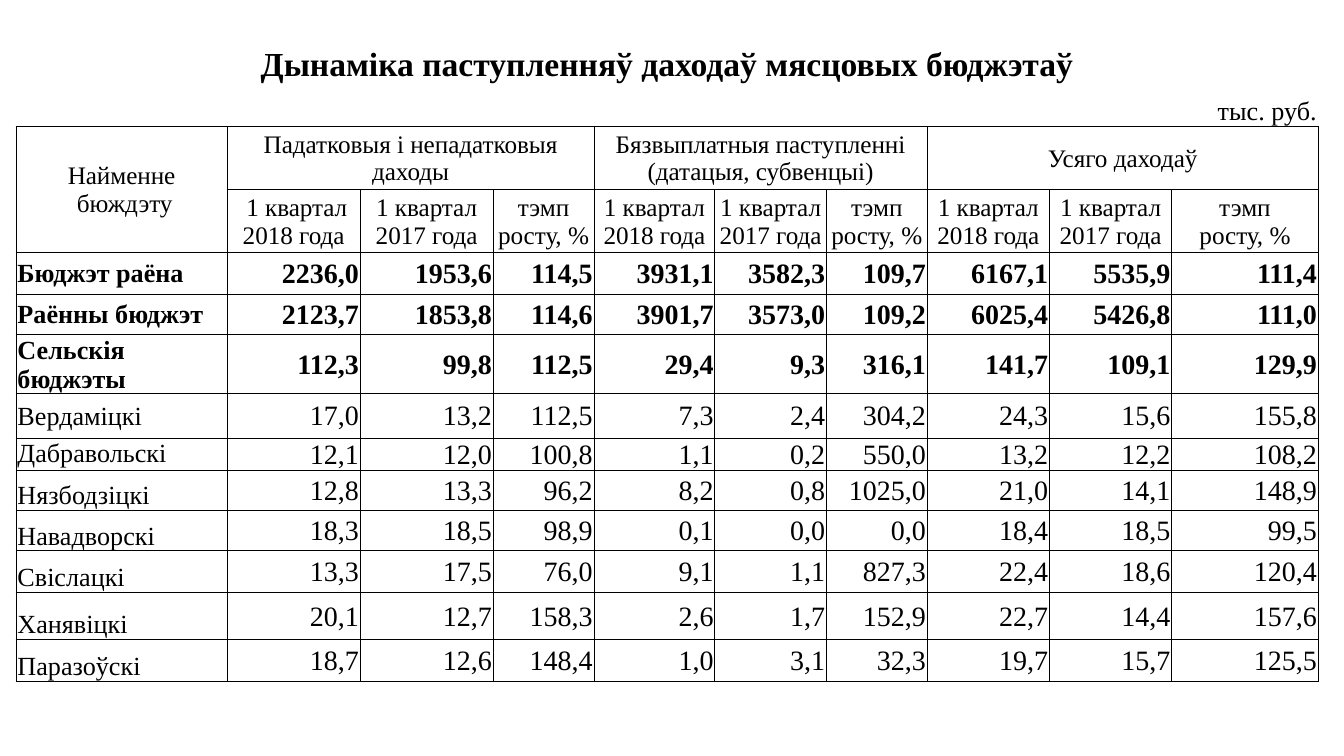
import lxml.etree
import pptx
import pptx.dml.color
import pptx.enum.text
import pptx.oxml.ns
import pptx.util

Inches = pptx.util.Inches
ALIGN = pptx.enum.text.PP_ALIGN
ANCHOR = pptx.enum.text.MSO_ANCHOR

FONT = "Times New Roman"
INK = "000000"
COLUMN_WIDTHS = [1.57, 0.99, 0.84, 0.15, 0.75, 0.9, 0.21, 0.62, 0.75, 0.91, 0.29, 0.62, 0.23, 0.86]
ROW_HEIGHTS = [0.33, 0.32, 0.47, 0.47, 0.31, 0.3, 0.3, 0.33, 0.24, 0.3, 0.3, 0.31, 0.35, 0.31]
UNIT_ROW, GROUP_ROW, PERIOD_ROW, FIRST_BUDGET_ROW = 1, 2, 3, 4

UNIT_SPANS = [(1, 2), (3, 4), (7, 2), (9, 2), (11, 2)]
VALUE_SPANS = [(1, 1), (2, 2), (4, 1), (5, 1), (6, 2), (8, 1), (9, 1), (10, 2), (12, 2)]
GROUPS = [
    (1, 4, "Падатковыя і непадатковыя даходы"),
    (5, 4, "Бязвыплатныя паступленні (датацыя, субвенцыі)"),
    (9, 5, "Усяго даходаў"),
]
PERIODS = ["1 квартал 2018 года", "1 квартал 2017 года", "тэмп\nросту, %"]
BUDGETS = [
    ("Бюджэт раёна", "2236,0 1953,6 114,5 3931,1 3582,3 109,7 6167,1 5535,9 111,4"),
    ("Раённы бюджэт", "2123,7 1853,8 114,6 3901,7 3573,0 109,2 6025,4 5426,8 111,0"),
    ("Сельскія бюджэты", "112,3 99,8 112,5 29,4 9,3 316,1 141,7 109,1 129,9"),
    ("Вердаміцкі", "17,0 13,2 112,5 7,3 2,4 304,2 24,3 15,6 155,8"),
    ("Дабравольскі", "12,1 12,0 100,8 1,1 0,2 550,0 13,2 12,2 108,2"),
    ("Нязбодзіцкі", "12,8 13,3 96,2 8,2 0,8 1025,0 21,0 14,1 148,9"),
    ("Навадворскі", "18,3 18,5 98,9 0,1 0,0 0,0 18,4 18,5 99,5"),
    ("Свіслацкі", "13,3 17,5 76,0 9,1 1,1 827,3 22,4 18,6 120,4"),
    ("Ханявіцкі", "20,1 12,7 158,3 2,6 1,7 152,9 22,7 14,4 157,6"),
    ("Паразоўскі", "18,7 12,6 148,4 1,0 3,1 32,3 19,7 15,7 125,5"),
]
TOTAL_COUNT = 3
TOP_ANCHORED = 4
FIRST_BOTTOM_ANCHORED = 5


def color(value):
    return pptx.dml.color.RGBColor.from_string(value)


def set_borders(cell, sides):
    properties = cell._tc.get_or_add_tcPr()
    qn = pptx.oxml.ns.qn
    for side in "LRTB":
        line = lxml.etree.SubElement(properties, qn(f"a:ln{side}"), w=str(pptx.util.Pt(0.5)))
        if side in sides:
            fill = lxml.etree.SubElement(line, qn("a:solidFill"))
            lxml.etree.SubElement(fill, qn("a:srgbClr"), val=INK)
        else:
            lxml.etree.SubElement(line, qn("a:noFill"))


def style_cell(cell, row):
    cell.margin_left = cell.margin_right = cell.margin_top = Inches(0.01)
    cell.margin_bottom = 0
    set_borders(cell, "LRTB" if row >= GROUP_ROW else "B" if row == UNIT_ROW else "")
    cell.fill.background()


def merge(table, row, column, width, height=1):
    cell = table.cell(row, column)
    if width > 1 or height > 1:
        cell.merge(table.cell(row + height - 1, column + width - 1))
    return cell


def write(cell, text, size, align=ALIGN.CENTER, anchor=ANCHOR.MIDDLE, bold=False):
    cell.vertical_anchor = anchor
    for index, line in enumerate(text.split("\n")):
        frame = cell.text_frame
        para = frame.add_paragraph() if index else frame.paragraphs[0]
        para.alignment = align
        span = para.add_run()
        span.text = line
        span.font.name = FONT
        span.font.size = pptx.util.Pt(size)
        span.font.bold = bold
        span.font.color.rgb = color(INK)


def add_grid(page):
    frame = page.shapes.add_table(
        len(ROW_HEIGHTS), len(COLUMN_WIDTHS), Inches(0.12), Inches(0.29),
        Inches(sum(COLUMN_WIDTHS)), Inches(sum(ROW_HEIGHTS)))
    table = frame.table
    table.first_row = table.horz_banding = False
    for column, width in zip(table.columns, COLUMN_WIDTHS):
        column.width = Inches(width)
    for index, (row, height) in enumerate(zip(table.rows, ROW_HEIGHTS)):
        row.height = Inches(height)
        for cell in row.cells:
            style_cell(cell, index)
    return table


def fill_title(table):
    title = merge(table, 0, 0, len(COLUMN_WIDTHS))
    write(title, "Дынаміка паступленняў даходаў мясцовых бюджэтаў", 18,
          anchor=ANCHOR.BOTTOM, bold=True)
    for column, width in UNIT_SPANS:
        merge(table, UNIT_ROW, column, width)
    unit = table.cell(UNIT_ROW, len(COLUMN_WIDTHS) - 1)
    write(unit, "тыс. руб.", 14, ALIGN.RIGHT, ANCHOR.BOTTOM)


def fill_header(table):
    write(merge(table, GROUP_ROW, 0, 1, 2), "Найменне\n бюждэту", 13.5)
    for column, width, text in GROUPS:
        write(merge(table, GROUP_ROW, column, width), text, 13.5)
    for index, (column, width) in enumerate(VALUE_SPANS):
        text = PERIODS[index % len(PERIODS)]
        if index == 0:
            text = " " + text
        write(merge(table, PERIOD_ROW, column, width), text, 13.5)


def fill_budgets(table):
    for index, (name, values) in enumerate(BUDGETS):
        row = FIRST_BUDGET_ROW + index
        bold = index < TOTAL_COUNT
        anchor = ANCHOR.TOP if index == TOP_ANCHORED else ANCHOR.MIDDLE
        name_anchor = ANCHOR.BOTTOM if index >= FIRST_BOTTOM_ANCHORED else anchor
        write(table.cell(row, 0), name, 14, ALIGN.LEFT, name_anchor, bold)
        for (column, width), value in zip(VALUE_SPANS, values.split()):
            write(merge(table, row, column, width), value, 15, ALIGN.RIGHT, anchor, bold)


def main():
    deck = pptx.Presentation()
    deck.slide_width = Inches(10)
    deck.slide_height = deck.slide_width * 9 // 16
    page = deck.slides.add_slide(deck.slide_layouts[6])
    table = add_grid(page)
    fill_title(table)
    fill_header(table)
    fill_budgets(table)
    deck.save("out.pptx")


if __name__ == "__main__":
    main()
